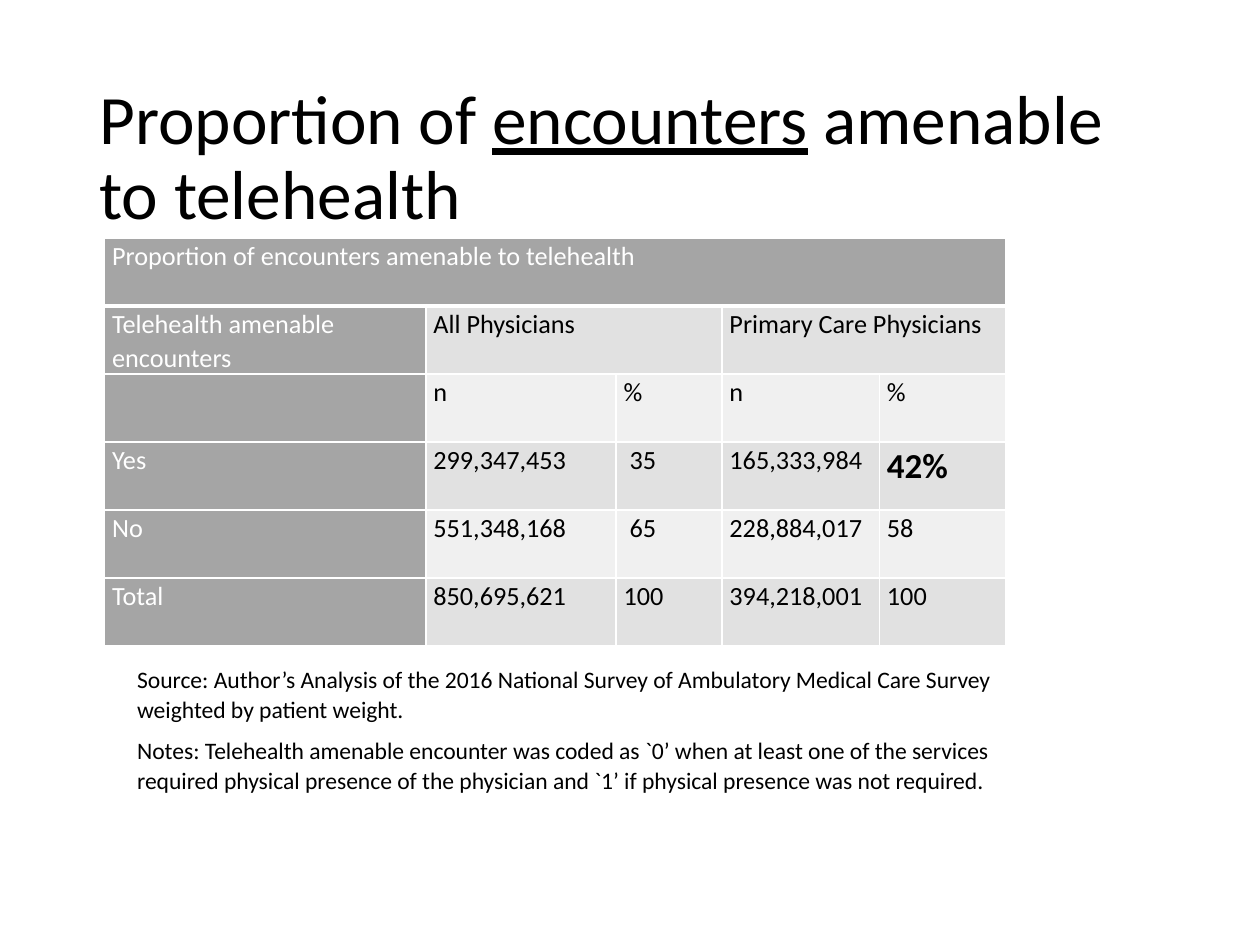
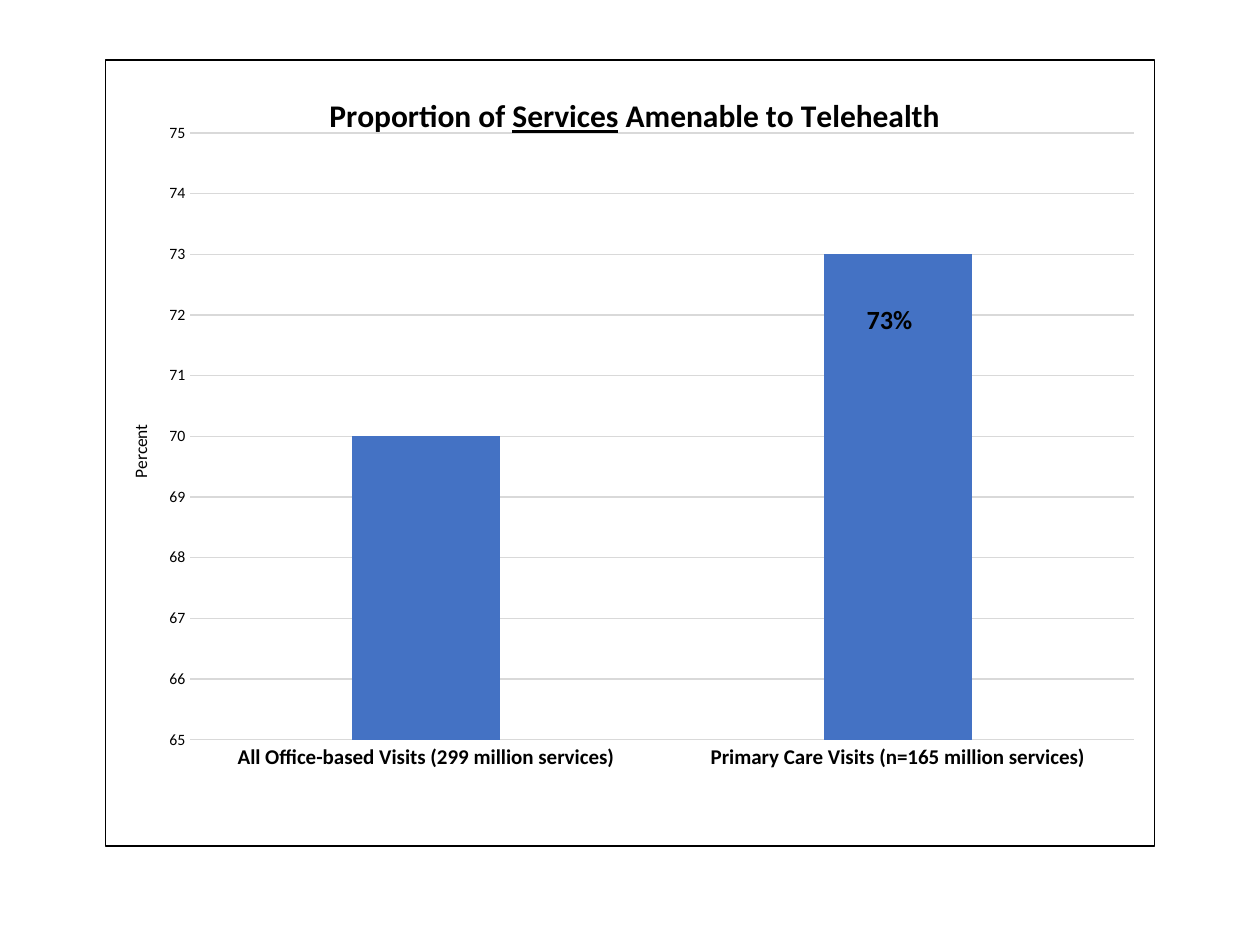
from lxml import etree
from pptx import Presentation
from pptx import util as u
from pptx.chart import data as chart_data
from pptx.dml.color import RGBColor
from pptx.enum import chart as chart_enum
from pptx.enum import text
from pptx.oxml import parse_xml
from pptx.oxml.ns import nsdecls, qn

PX = 9144  # EMU in one px, at 100 px to the inch
FONT = "Calibri"
BLACK = RGBColor(0x00, 0x00, 0x00)
WHITE = RGBColor(0xFF, 0xFF, 0xFF)
HEADER_GRAY = RGBColor(0xA5, 0xA5, 0xA5)
BAND_DARK = RGBColor(0xE1, 0xE1, 0xE1)
BAND_LIGHT = RGBColor(0xF0, 0xF0, 0xF0)
GRID_GRAY = RGBColor(0xD9, 0xD9, 0xD9)
BAR_BLUE = RGBColor(0x44, 0x72, 0xC4)


def add_run(paragraph, words, size, color=BLACK, bold=False, underline=False):
    run = paragraph.add_run()
    run.text = words
    run.font.name = FONT
    run.font.size = u.Pt(size)
    run.font.color.rgb = color
    run.font.bold = bold
    run.font.underline = underline


def set_layout(element, target="", **fractions):
    """Fix a chart part at fractions of the chart's width and height."""
    layout = element.find(qn("c:layout"))
    if layout is None:
        layout = parse_xml(f"<c:layout {nsdecls('c')}/>")
        element.insert(0, layout)
    manual = etree.SubElement(layout, qn("c:manualLayout"))
    if target:
        etree.SubElement(manual, qn("c:layoutTarget"), val=target)
    for mode in ("xMode", "yMode"):
        etree.SubElement(manual, qn(f"c:{mode}"), val="edge")
    for name, value in fractions.items():
        etree.SubElement(manual, qn(f"c:{name}"), val=str(value))


presentation = Presentation()
presentation.slide_width = 1000 * PX
presentation.slide_height = 750 * PX
blank_layout = presentation.slide_layouts[6]

# Slide 1: encounters table
slide = presentation.slides.add_slide(blank_layout)

title = slide.shapes.add_textbox(69 * PX, 124 * PX, 862 * PX, 65 * PX).text_frame
title.word_wrap = True
title.vertical_anchor = text.MSO_ANCHOR.BOTTOM
title.margin_bottom = 3 * PX
paragraph = title.paragraphs[0]
paragraph.line_spacing = 0.9
add_run(paragraph, "Proportion of ", 39.6)
add_run(paragraph, "encounters", 39.6, underline=True)
add_run(paragraph, " amenable to telehealth", 39.6)

rows = [
    ["Proportion of encounters amenable to telehealth", "", "", "", ""],
    ["Telehealth amenable encounters", "All Physicians", "", "Primary Care Physicians", ""],
    ["", "n", "%", "n", "%"],
    ["Yes", "299,347,453", " 35", "165,333,984", "42%"],
    ["No", "551,348,168", " 65", "228,884,017", "58"],
    ["Total", "850,695,621", "100", "394,218,001", "100"],
]
column_widths = [255, 151, 84, 125, 100]
row_height = 54
table = slide.shapes.add_table(
    len(rows), len(column_widths), 83 * PX, 189 * PX,
    sum(column_widths) * PX, len(rows) * row_height * PX).table
for column, width in zip(table.columns, column_widths):
    column.width = width * PX

for row_index, row in enumerate(rows):
    table.rows[row_index].height = row_height * PX
    for column_index, words in enumerate(row):
        cell = table.cell(row_index, column_index)
        cell.margin_left = cell.margin_right = 6 * PX
        cell.margin_top = cell.margin_bottom = 0
        for side in "LRTB":
            thick = row_index == 0 and side == "B"
            width = u.Pt(3 if thick else 1)
            cell._tc.get_or_add_tcPr().append(parse_xml(
                f'<a:ln{side} {nsdecls("a")} w="{width}"><a:solidFill>'
                f'<a:srgbClr val="{WHITE}"/></a:solidFill></a:ln{side}>'))
        is_header = row_index == 0 or column_index == 0
        cell.fill.solid()
        if is_header:
            cell.fill.fore_color.rgb = HEADER_GRAY
        else:
            cell.fill.fore_color.rgb = BAND_DARK if row_index % 2 else BAND_LIGHT
        if words:
            paragraph = cell.text_frame.paragraphs[0]
            paragraph.line_spacing = 1.07
            key_figure = words == "42%"
            add_run(paragraph, words, 20 if key_figure else 15,
                    WHITE if is_header else BLACK, bold=key_figure)

for row_index, first, last in [(0, 0, 4), (1, 1, 2), (1, 3, 4)]:
    table.cell(row_index, first).merge(table.cell(row_index, last))

notes = slide.shapes.add_textbox(99 * PX, 521 * PX, 699 * PX, 139 * PX).text_frame
notes.word_wrap = True
for index, words in enumerate([
    "Source: Author’s Analysis of the 2016 National Survey of Ambulatory Medical "
    "Care Survey weighted by patient weight.",
    "Notes: Telehealth amenable encounter was coded as `0’ when at least one of the "
    "services required physical presence of the physician and `1’ if physical "
    "presence was not required.",
]):
    paragraph = notes.add_paragraph() if index else notes.paragraphs[0]
    paragraph.line_spacing = 1.07
    paragraph.space_after = u.Pt(6)
    add_run(paragraph, words, 13.5)

# Slide 2: services chart
slide = presentation.slides.add_slide(blank_layout)

services = chart_data.CategoryChartData()
services.categories = ["All Office-based Visits (299 million services)",
                       "Primary Care Visits (n=165 million services)"]
services.add_series("Series 1", [70, 73])
chart = slide.shapes.add_chart(
    chart_enum.XL_CHART_TYPE.COLUMN_CLUSTERED,
    83 * PX, 47 * PX, 834 * PX, 625 * PX, services).chart
chart.has_legend = False
chart.font.name = FONT
chart.font.size = u.Pt(10)
chart.font.color.rgb = BLACK

chart.has_title = True
paragraph = chart.chart_title.text_frame.paragraphs[0]
add_run(paragraph, "Proportion of ", 18, bold=True)
add_run(paragraph, "Services", 18, bold=True, underline=True)
add_run(paragraph, " Amenable to Telehealth", 18, bold=True)
set_layout(chart.chart_title._element, x=0.21, y=0.04)

plot = chart.plots[0]
plot.gap_width = 219
plot.overlap = -27
plot.vary_by_categories = False
bars = plot.series[0].format
bars.fill.solid()
bars.fill.fore_color.rgb = BAR_BLUE

value_axis = chart.value_axis
value_axis.minimum_scale = 65
value_axis.maximum_scale = 75
value_axis.major_unit = 1
value_axis.format.line.fill.background()
category_axis = chart.category_axis
for axis, size, bold in [(value_axis, 9, False), (category_axis, 12, True)]:
    axis.major_tick_mark = axis.minor_tick_mark = chart_enum.XL_TICK_MARK.NONE
    labels = axis.tick_labels.font
    labels.name = FONT
    labels.size = u.Pt(size)
    labels.bold = bold
    labels.color.rgb = BLACK
for line in (value_axis.major_gridlines.format.line, category_axis.format.line):
    line.color.rgb = GRID_GRAY
    line.width = u.Pt(0.75)

axis_title = value_axis.axis_title
add_run(axis_title.text_frame.paragraphs[0], "Percent", 10)
axis_title.text_frame._txBody.bodyPr.set("rot", "-5400000")
set_layout(axis_title._element, x=0.02, y=0.46)

chart_space = chart._chartSpace
set_layout(chart_space.chart.plotArea, "inner", x=0.081, y=0.093, w=0.899, h=0.772)
chart_space.chart.addnext(parse_xml(
    f'<c:spPr {nsdecls("c", "a")}><a:solidFill><a:srgbClr val="{WHITE}"/></a:solidFill>'
    f'<a:ln w="{u.Pt(0.75)}"><a:solidFill><a:srgbClr val="{BLACK}"/></a:solidFill></a:ln>'
    '</c:spPr>'))

bar_label = slide.shapes.add_textbox(678 * PX, 236 * PX, 64 * PX, 35 * PX).text_frame
bar_label.word_wrap = True
add_run(bar_label.paragraphs[0], "73%", 15, bold=True)

presentation.save("out.pptx")
